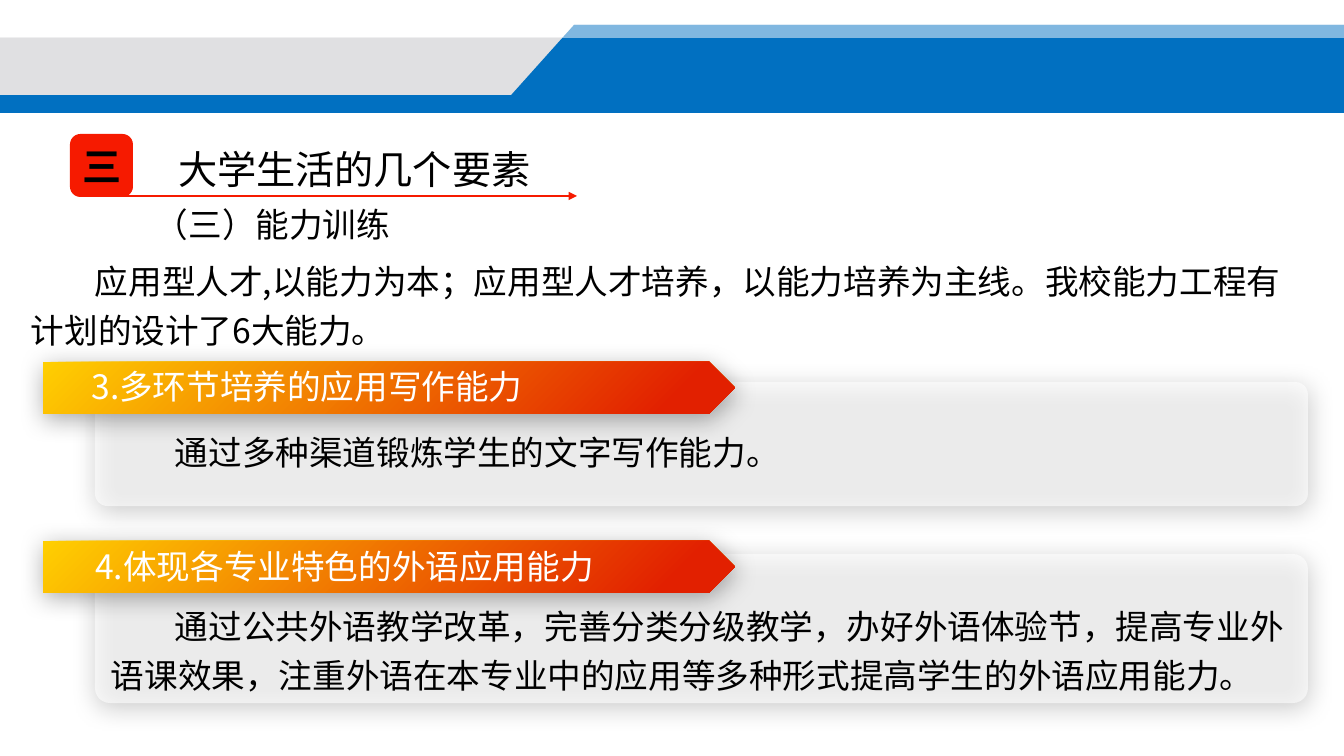
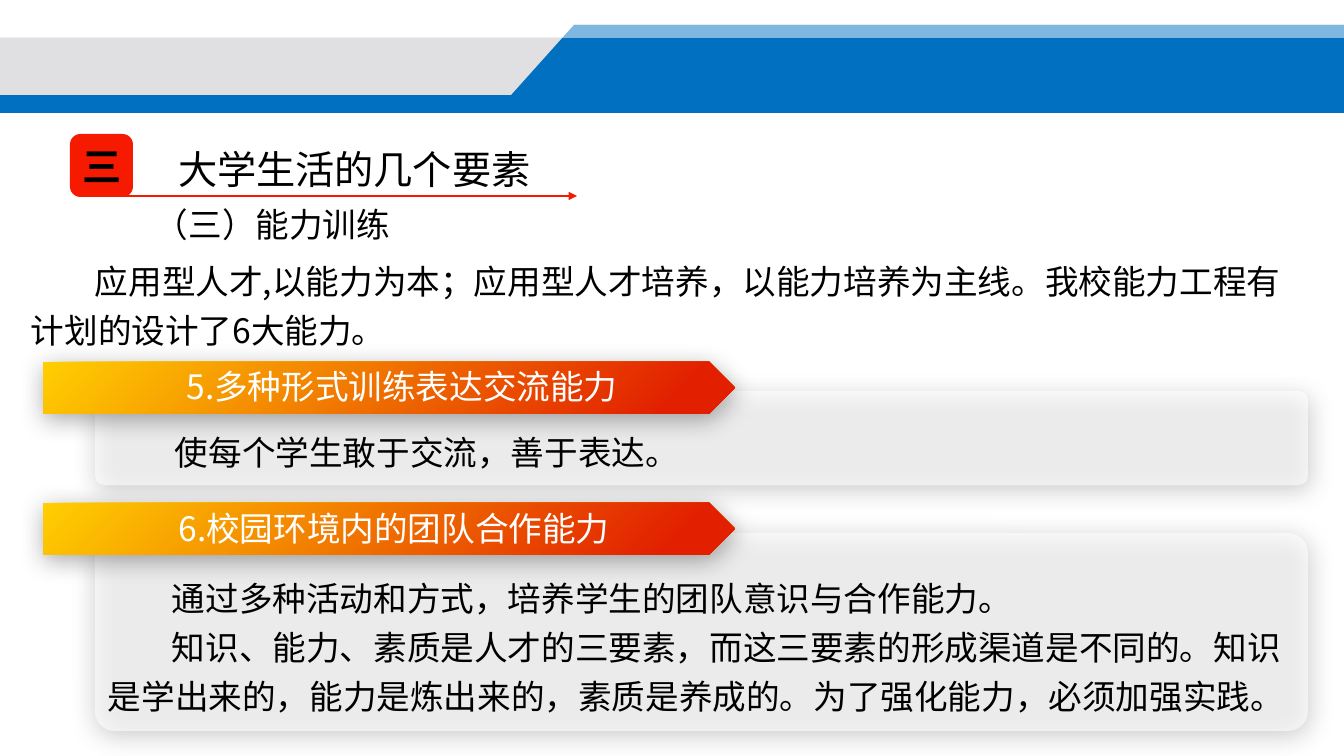
import pptx
import pptx.dml.color
import pptx.enum.shapes
import pptx.enum.text
import pptx.oxml
import pptx.oxml.ns
import pptx.util
from dataclasses import dataclass

PX = 914400 / 100.8  # EMU in one px


@dataclass(frozen=True)
class Theme:
    blue: str = "0170C1"
    grey: str = "E0E0E2"
    red: str = "F61A00"
    white: str = "FFFFFF"
    black: str = "000000"
    gold: str = "FFCF01"
    scarlet: str = "E22000"
    body_font: str = "Noto Sans CJK SC"
    title_font: str = "Cabin"
    badge_font: str = "Roboto Condensed"
    title_size: int = 28
    body_size: int = 24


THEME = Theme()
RGB = pptx.dml.color.RGBColor.from_string
SHAPES = pptx.enum.shapes.MSO_SHAPE
ANCHOR = pptx.enum.text.MSO_ANCHOR
ALIGN = pptx.enum.text.PP_ALIGN
A = pptx.oxml.ns.nsdecls("a")
qn = pptx.oxml.ns.qn


def add_block(slide, kind, box, color, opacity=100, outlined=False, shadowed=False):
    shape = slide.shapes.add_shape(kind, *[round(v * PX) for v in box])
    shape.shadow.inherit = False
    shape.fill.solid()
    shape.fill.fore_color.rgb = RGB(color)
    if opacity < 100:
        shape.element.spPr.find(qn("a:solidFill"))[0].append(
            pptx.oxml.parse_xml(f'<a:alpha {A} val="{opacity * 1000}"/>'))
    if outlined:
        shape.line.color.rgb = RGB(color)
        shape.line.width = pptx.util.Pt(1)
    else:
        shape.line.fill.background()
    if shadowed:
        shape.element.spPr.find(qn("a:effectLst")).append(pptx.oxml.parse_xml(
            f'<a:outerShdw {A} blurRad="{pptx.util.Pt(17.8)}" dist="{pptx.util.Pt(3)}" '
            f'dir="{87 * 60000}" algn="ctr" rotWithShape="0"><a:srgbClr val="{THEME.black}">'
            '<a:alpha val="33000"/></a:srgbClr></a:outerShdw>'))
    return shape


def write_text(shape, lines, size=THEME.body_size, font=THEME.body_font, color=THEME.black,
               bold=False, align=ALIGN.LEFT, anchor=ANCHOR.TOP, spacing=None, indent=0, wrap=True):
    frame = shape.text_frame
    frame.word_wrap = wrap
    frame.vertical_anchor = anchor
    for index, line in enumerate(lines):
        paragraph = frame.add_paragraph() if index else frame.paragraphs[0]
        paragraph.alignment = align
        if spacing:
            paragraph.line_spacing = pptx.util.Pt(spacing)
        if indent:
            properties = paragraph._p.get_or_add_pPr()
            properties.set("marL", "0")
            properties.set("indent", str(round(indent * PX)))
        run = paragraph.add_run()
        run.text = line
        run.font.size = pptx.util.Pt(size)
        run.font.bold = bold
        run.font.name = font
        run.font.color.rgb = RGB(color)
        # East Asian glyphs need their own typeface entry
        run._r.get_or_add_rPr().append(
            pptx.oxml.parse_xml(f'<a:ea {A} typeface="{THEME.body_font}"/>'))


# Each section: panel, arrow top, heading box, heading, body box, body lines, spacing, anchor
SLIDES = [
    [
        ((95, 382, 1213, 124), 362, (2, 361, 610, 50), "3.多环节培养的应用写作能力",
         (101, 425, 1173, 50), ["通过多种渠道锻炼学生的文字写作能力。"], 30, ANCHOR.TOP),
        ((95, 554, 1213, 149), 541, (77, 541, 535, 50), "4.体现各专业特色的外语应用能力",
         (101, 592, 1206, 104),
         ["通过公共外语教学改革，完善分类分级教学，办好外语体验节，提高专业外语课效果，"
          "注重外语在本专业中的应用等多种形式提高学生的外语应用能力。"], 35, ANCHOR.MIDDLE),
    ],
    [
        ((95, 391, 1213, 94), 362, (2, 361, 800, 50), "5.多种形式训练表达交流能力",
         (101, 425, 1173, 50), ["使每个学生敢于交流，善于表达。"], 30, ANCHOR.TOP),
        ((95, 533, 1213, 198), 503, (77, 503, 634, 50), "6.校园环境内的团队合作能力",
         (98, 564, 1206, 153),
         ["通过多种活动和方式，培养学生的团队意识与合作能力。",
          "知识、能力、素质是人才的三要素，而这三要素的形成渠道是不同的。知识是学出来的，"
          "能力是炼出来的，素质是养成的。为了强化能力，必须加强实践。"], 35, ANCHOR.MIDDLE),
    ],
]
INDENT = 64

presentation = pptx.Presentation()
presentation.slide_width = round(1344 * PX)
presentation.slide_height = round(756 * PX)

for sections in SLIDES:
    slide = presentation.slides.add_slide(presentation.slide_layouts[5])

    # Header bands
    add_block(slide, SHAPES.RECTANGLE, (0, 56, 1344, 56), THEME.blue, outlined=True)
    add_block(slide, SHAPES.RECTANGLE, (0, 38, 1344, 56), THEME.grey, outlined=True)
    builder = slide.shapes.build_freeform(574, 25, scale=PX)
    builder.add_line_segments([(1344, 25), (1344, 112), (496, 112)], close=True)
    slant = builder.convert_to_shape()
    slant.shadow.inherit = False
    slant.fill.solid()
    slant.fill.fore_color.rgb = RGB(THEME.blue)
    slant.line.fill.background()
    add_block(slide, SHAPES.RECTANGLE, (0, 25, 1344, 13), THEME.white, opacity=50)

    # Badge, title and underline arrow
    badge = add_block(slide, SHAPES.ROUNDED_RECTANGLE, (70, 134, 63, 63), THEME.red)
    write_text(badge, ["三"], THEME.title_size, THEME.badge_font, bold=True,
               align=ALIGN.CENTER, anchor=ANCHOR.MIDDLE)
    underline = slide.shapes.add_connector(
        pptx.enum.shapes.MSO_CONNECTOR.STRAIGHT, *[round(v * PX) for v in (102, 196, 577, 196)])
    underline.line.color.rgb = RGB(THEME.red)
    underline.line.width = pptx.util.Pt(1.5)
    underline.line._get_or_add_ln().append(
        pptx.oxml.parse_xml(f'<a:tailEnd {A} type="triangle"/>'))
    underline._element.spPr.append(pptx.oxml.parse_xml(f"<a:effectLst {A}/>"))

    title = slide.shapes.title
    title.left, title.top, title.width, title.height = [
        round(v * PX) for v in (168, 140, 377, 57)]
    write_text(title, ["大学生活的几个要素"], THEME.title_size, THEME.title_font, wrap=False)

    # Subtitle and introduction
    subtitle = slide.shapes.add_textbox(*[round(v * PX) for v in (145, 190, 258, 55)])
    write_text(subtitle, ["（三）能力训练"], spacing=35, wrap=False)
    introduction = slide.shapes.add_textbox(*[round(v * PX) for v in (21, 247, 1286, 109)])
    write_text(introduction,
               ["应用型人才,以能力为本；应用型人才培养，以能力培养为主线。"
                "我校能力工程有计划的设计了6大能力。"], spacing=35, indent=INDENT)

    # Ability sections
    for panel_box, arrow_top, heading_box, heading, body_box, lines, spacing, anchor in sections:
        panel = add_block(slide, SHAPES.ROUNDED_RECTANGLE, panel_box, THEME.white,
                          opacity=60, shadowed=True)
        panel.adjustments[0] = 0.1

        arrow = add_block(slide, SHAPES.PENTAGON, (43, arrow_top, 692, 52), THEME.gold,
                          shadowed=True)
        arrow.fill.gradient()
        arrow.fill.gradient_angle = 315
        for stop, position, color in zip(arrow.fill.gradient_stops, (0, 0.9),
                                         (THEME.gold, THEME.scarlet)):
            stop.position = position
            stop.color.rgb = RGB(color)

        heading_text = slide.shapes.add_textbox(*[round(v * PX) for v in heading_box])
        write_text(heading_text, [heading], color=THEME.white, align=ALIGN.CENTER)
        body = slide.shapes.add_textbox(*[round(v * PX) for v in body_box])
        if anchor == ANCHOR.MIDDLE:
            body.text_frame.margin_bottom = 0
        write_text(body, lines, anchor=anchor, spacing=spacing, indent=INDENT)

presentation.save("out.pptx")
